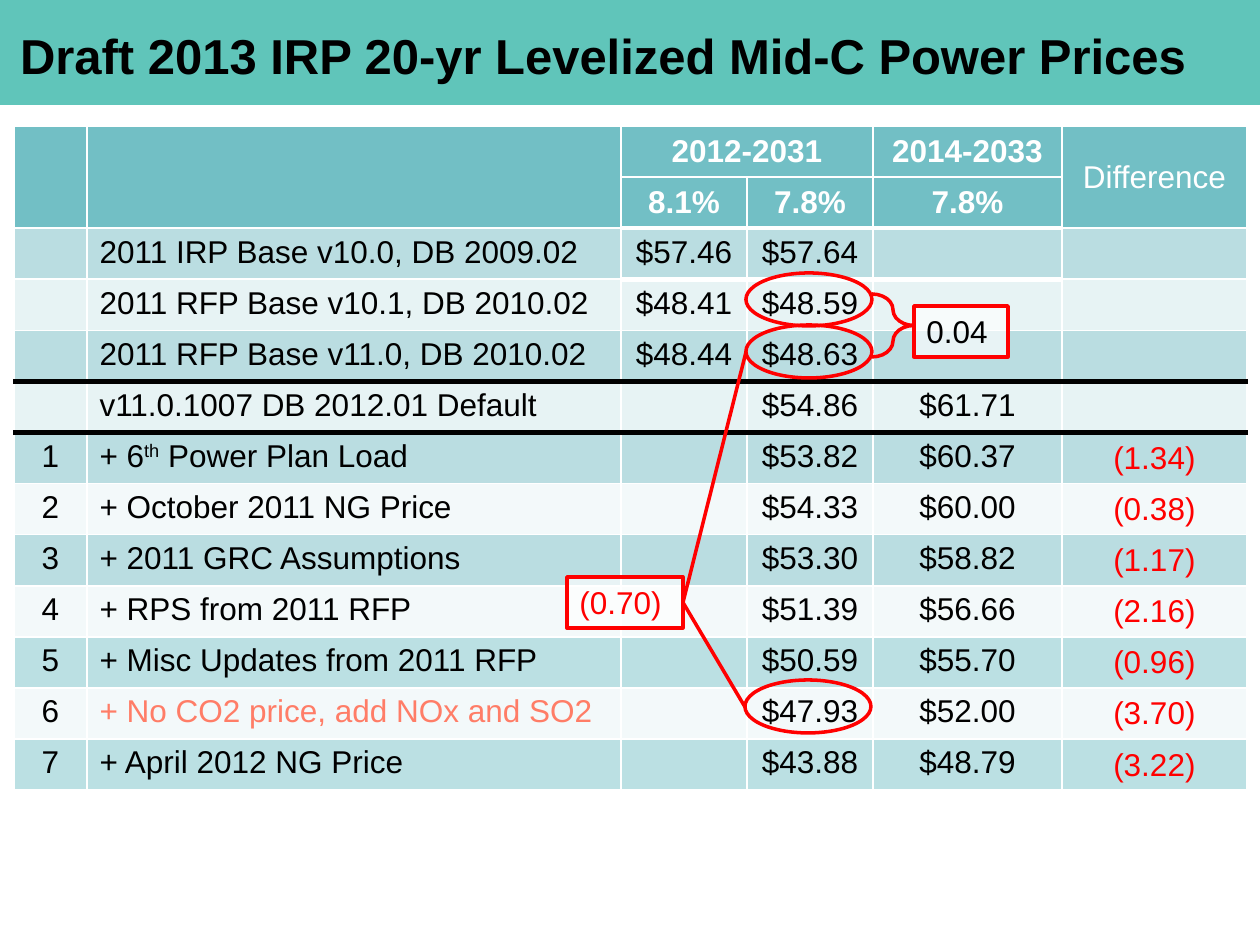
from lxml.etree import SubElement
from pptx import Presentation
from pptx.dml.color import RGBColor
from pptx.enum.shapes import MSO_CONNECTOR, MSO_SHAPE
from pptx.enum.text import MSO_ANCHOR, PP_ALIGN
from pptx.oxml import parse_xml
from pptx.oxml.ns import nsdecls, qn
from pptx.util import Emu, Pt

BLACK, WHITE, RED, CORAL = "000000", "FFFFFF", "FF0000", "FF7D67"
BANNER, HEADER = "60C5BA", "72BFC5"
BAND, LATE_BAND, PALE, PALEST = "BADDE1", "BBE0E3", "E7F3F4", "F3F9FA"

COLUMN_WIDTHS = [73, 534, 126, 126, 189, 185]
HEADER_ROWS = [
    ["", "", "2012-2031", "", "2014-2033", "Difference"],
    ["", "", "8.1%", "7.8%", "7.8%", ""],
]
MERGES = [((0, 0), (1, 0)), ((0, 1), (1, 1)), ((0, 2), (0, 3)), ((0, 5), (1, 5))]
PRICE_ROWS = [
    (BAND, ["", "2011 IRP Base v10.0, DB 2009.02", "$57.46", "$57.64", "", ""]),
    (PALE, ["", "2011 RFP Base v10.1, DB 2010.02", "$48.41", "$48.59", "", ""]),
    (BAND, ["", "2011 RFP Base v11.0, DB 2010.02", "$48.44", "$48.63", "", ""]),
    (PALE, ["", "v11.0.1007 DB 2012.01 Default", "", "$54.86", "$61.71", ""]),
    (BAND, ["1", ("+ 6", "^th", " Power Plan Load"), "", "$53.82", "$60.37", "(1.34)"]),
    (PALEST, ["2", "+ October 2011 NG Price", "", "$54.33", "$60.00", "(0.38)"]),
    (BAND, ["3", "+ 2011 GRC Assumptions", "", "$53.30", "$58.82", "(1.17)"]),
    (PALEST, ["4", "+ RPS from 2011 RFP", "", "$51.39", "$56.66", "(2.16)"]),
    (LATE_BAND, ["5", "+ Misc Updates from 2011 RFP", "", "$50.59", "$55.70", "(0.96)"]),
    (PALEST, ["6", "+ No CO2 price, add NOx and SO2", "", "$47.93", "$52.00", "(3.70)"]),
    (LATE_BAND, ["7", "+ April 2012 NG Price", "", "$43.88", "$48.79", "(3.22)"]),
]


def px(length):
    return Emu(round(length * 914400 / 126))


def rgb(color):
    return RGBColor.from_string(color)


def rule_at(boundary, column):
    if boundary in (5, 6):
        return BLACK, 3
    if boundary in (2, 3) and 2 <= column <= 4:
        return WHITE, 3
    return WHITE, 1


class PriceSlide:
    font = "Arial"
    body_size = 18
    outline = 2

    def __init__(self, deck):
        self.slide = deck.slides.add_slide(deck.slide_layouts[5])
        self.shapes = self.slide.shapes

    def add_text(self, frame, runs, color, size=body_size, bold=False, align=PP_ALIGN.LEFT):
        paragraph = frame.paragraphs[0]
        paragraph.alignment = align
        for text in (runs if isinstance(runs, tuple) else (runs,)):
            run = paragraph.add_run()
            run.text = text.removeprefix("^")
            run.font.name = self.font
            run.font.size = Pt(size)
            run.font.bold = bold
            run.font.color.rgb = rgb(color)
            if text.startswith("^"):
                run._r.get_or_add_rPr().set("baseline", "30000")

    def shape(self, kind, left, top, width, height, fill=None, line=RED):
        shape = self.shapes.add_shape(kind, px(left), px(top), px(width), px(height))
        shape.shadow.inherit = False
        if fill:
            shape.fill.solid()
            shape.fill.fore_color.rgb = rgb(fill)
        else:
            shape.fill.background()
        if line:
            shape.line.color.rgb = rgb(line)
            shape.line.width = Pt(self.outline)
        else:
            shape.line.fill.background()
        return shape

    def title(self, text):
        banner = self.shape(MSO_SHAPE.RECTANGLE, 0, 0, 1260, 105, BANNER, None)
        title = self.shapes.title
        title._element.addprevious(banner._element)
        title.left, title.top, title.width, title.height = px(10), px(8), px(1218), px(93)
        frame = title.text_frame
        frame.margin_left = frame.margin_right = px(10)
        frame.margin_top = frame.margin_bottom = px(5)
        frame.vertical_anchor = MSO_ANCHOR.MIDDLE
        self.add_text(frame, text, BLACK, 28, True)

    def borders(self, cell, row, column):
        sides = {"lnL": (WHITE, 1), "lnR": (WHITE, 1),
                 "lnT": rule_at(row, column), "lnB": rule_at(row + 1, column)}
        for position, (side, (color, width)) in enumerate(sides.items()):
            edge = parse_xml(
                f'<a:{side} {nsdecls("a")} w="{Pt(width)}"><a:solidFill>'
                f'<a:srgbClr val="{color}"/></a:solidFill></a:{side}>')
            cell._tc.get_or_add_tcPr().insert(position, edge)

    def cell(self, cell, row, column, text, fill):
        cell.fill.solid()
        cell.fill.fore_color.rgb = rgb(fill)
        self.borders(cell, row, column)
        is_header = row < len(HEADER_ROWS)
        is_difference = column == 5
        if is_header or is_difference:
            cell.vertical_anchor = MSO_ANCHOR.MIDDLE
        if is_difference and not is_header:
            cell.margin_left = cell.margin_right = cell.margin_top = px(1)
            cell.margin_bottom = 0
        if not text:
            return
        color = WHITE if is_header else RED if is_difference else BLACK
        if "CO2" in text:
            color = CORAL
        align = PP_ALIGN.LEFT if column == 1 else PP_ALIGN.CENTER
        self.add_text(cell.text_frame, text, color, bold=is_header and not is_difference, align=align)

    def price_table(self):
        rows = [(HEADER, texts) for texts in HEADER_ROWS] + PRICE_ROWS
        table = self.shapes.add_table(len(rows), len(COLUMN_WIDTHS), px(14), px(126),
                                      px(sum(COLUMN_WIDTHS)), px(664)).table
        table.first_row = table.horz_banding = False
        for column, width in zip(table.columns, COLUMN_WIDTHS):
            column.width = px(width)
        for row, (fill, texts) in enumerate(rows):
            for column, text in enumerate(texts):
                self.cell(table.cell(row, column), row, column, text, fill)
        for first, last in MERGES:
            table.cell(*first).merge(table.cell(*last))

    def ring(self, left, top):
        self.shape(MSO_SHAPE.OVAL, left, top, 126, 53)

    def brace(self, left, top, width, height):
        brace = self.shape(MSO_SHAPE.RIGHT_BRACE, left, top, width, height)
        brace.adjustments[0] = 0.38

    def gap_box(self, left, top, width, text, color):
        box = self.shape(MSO_SHAPE.RECTANGLE, left, top, width, 51, WHITE)
        tint = box._element.spPr.find(qn("a:solidFill")).find(qn("a:srgbClr"))
        SubElement(tint, qn("a:alpha")).set("val", "67000")
        box.text_frame.vertical_anchor = MSO_ANCHOR.TOP
        self.add_text(box.text_frame, text, color)
        return box

    def link(self, left, top, box):
        link = self.shapes.add_connector(MSO_CONNECTOR.STRAIGHT, px(left), px(top), 0, 0)
        link.end_connect(box, 3)
        link.line.color.rgb = rgb(RED)
        link.line.width = Pt(self.outline)
        SubElement(link._element.spPr, qn("a:effectLst"))


def main():
    deck = Presentation()
    deck.slide_width, deck.slide_height = px(1260), px(945)
    prices = PriceSlide(deck)
    prices.title("Draft 2013 IRP 20-yr Levelized Mid-C Power Prices")
    prices.price_table()
    prices.ring(746, 325)
    prices.ring(745, 680)
    rfp_gap = prices.gap_box(567, 577, 116, "(0.70)", RED)
    prices.link(746, 352, rfp_gap)
    prices.link(745, 707, rfp_gap)
    prices.ring(746, 273)
    prices.brace(872, 294, 42, 63)
    prices.gap_box(914, 306, 94, "0.04", BLACK)
    deck.save("out.pptx")


if __name__ == "__main__":
    main()
